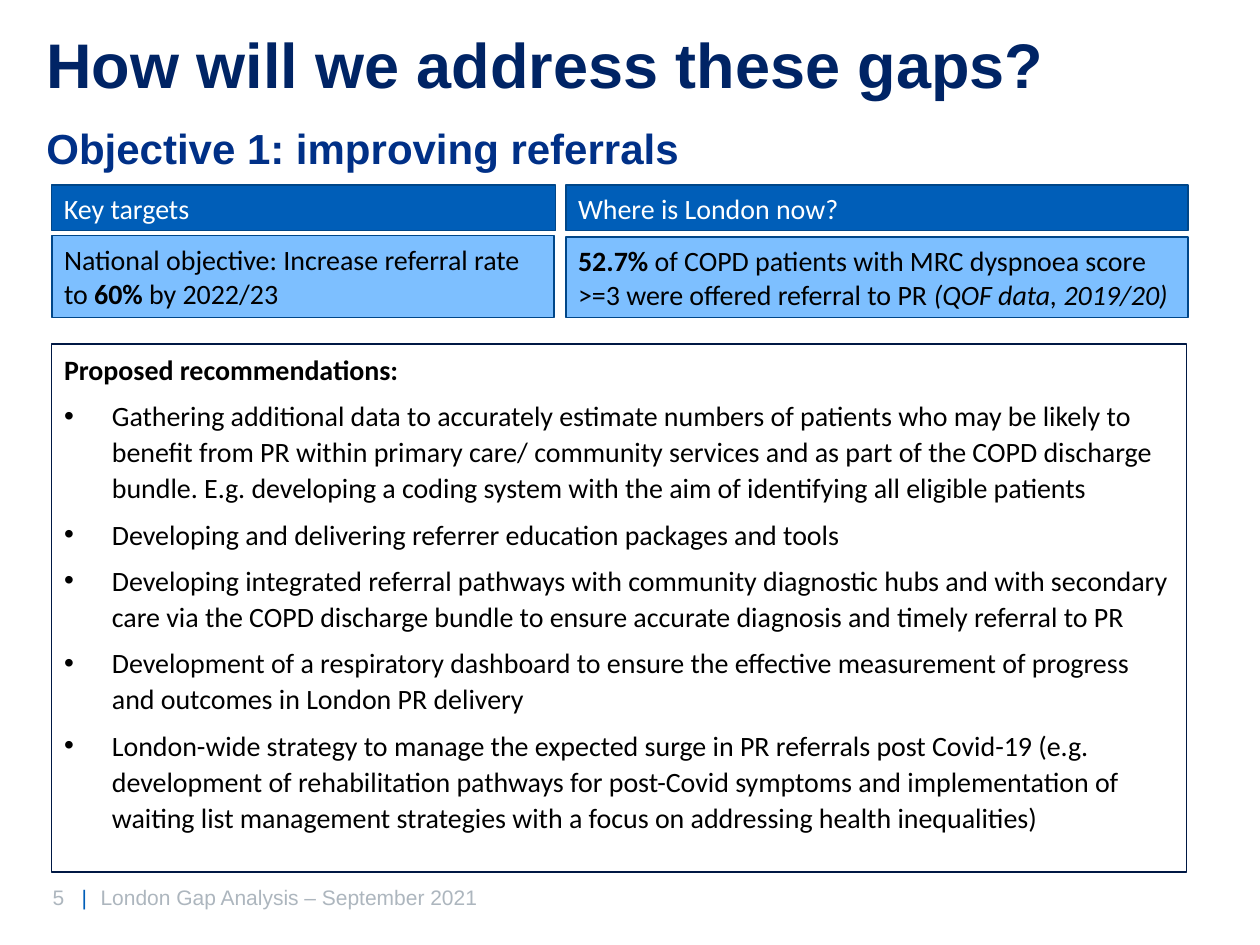
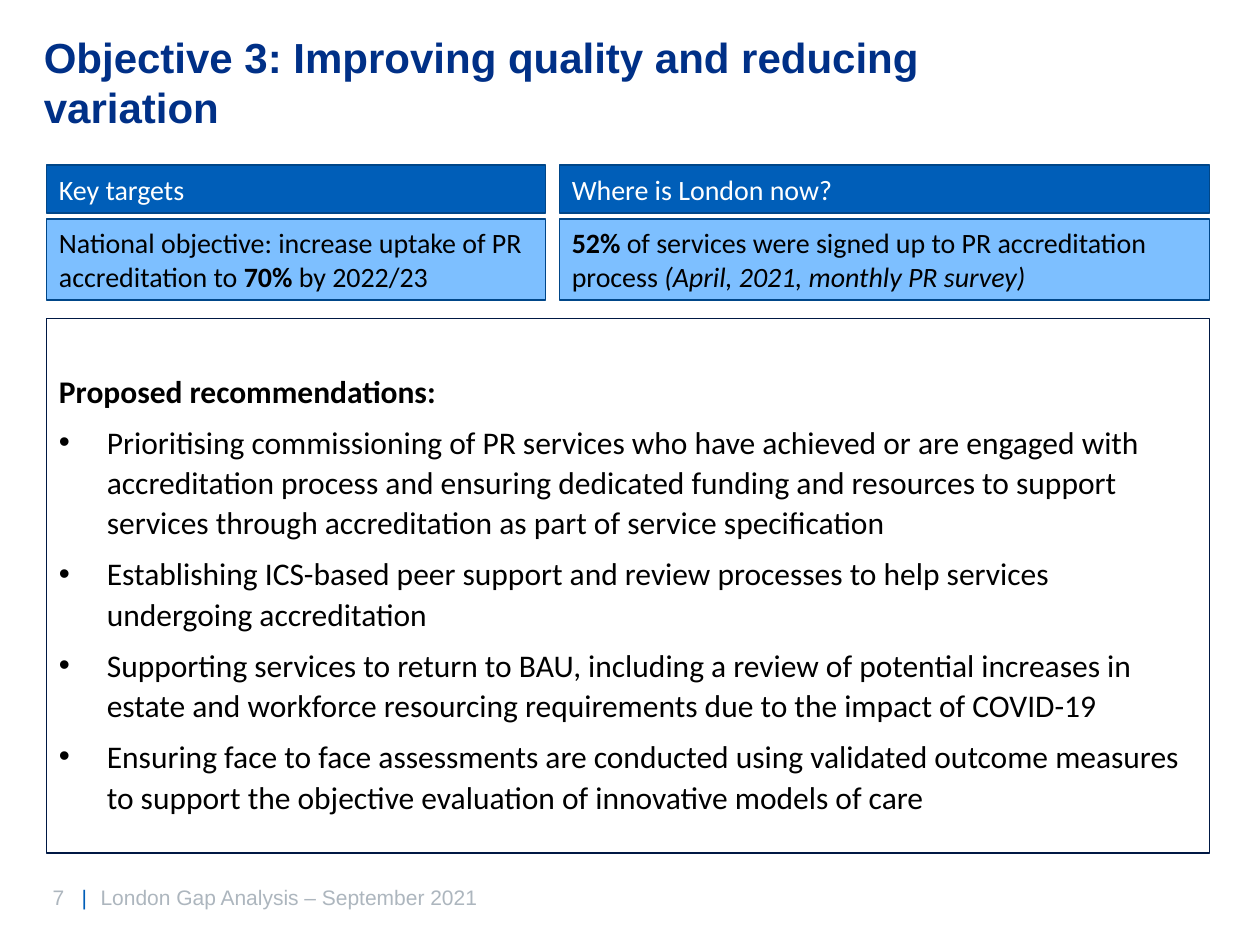
from dataclasses import dataclass

from lxml.etree import SubElement
from pptx import Presentation
from pptx.dml.color import RGBColor
from pptx.enum.shapes import MSO_SHAPE as Preset
from pptx.enum.text import MSO_ANCHOR as Anchor, PP_ALIGN as Align
from pptx.oxml.ns import qn
from pptx.util import Inches, Pt

WHITE = RGBColor(0xFF, 0xFF, 0xFF)
BLACK = RGBColor(0x00, 0x00, 0x00)
TITLE_NAVY = RGBColor(0x00, 0x24, 0x65)
OBJECTIVE_BLUE = RGBColor(0x00, 0x30, 0x87)
HEADER_BLUE = RGBColor(0x00, 0x5E, 0xB8)
DETAIL_BLUE = RGBColor(0x7D, 0xBF, 0xFF)
CARD_EDGE = RGBColor(0x00, 0x46, 0x88)
PANEL_EDGE = RGBColor(0x00, 0x18, 0x44)
FOOTER_GREY = RGBColor(0xAD, 0xB6, 0xBE)

HEADING_FONT, BODY_FONT = "Arial", "Calibri"
FOOTER_TEXT = "London Gap Analysis – September 2021"
BAR_TAB = Inches(0.23)
BULLET_INDENT = Inches(0.38)
CARD_TEXT_SIZE = 16


@dataclass(frozen=True)
class Box:
    left: float
    top: float
    width: float
    height: float

    def emu(self) -> tuple:
        return tuple(Inches(v) for v in (self.left, self.top, self.width, self.height))


@dataclass(frozen=True)
class Words:
    text: str
    bold: bool = False
    italic: bool = False


@dataclass(frozen=True)
class Card:
    header: str
    header_box: Box
    detail: tuple[Words, ...]
    detail_box: Box


@dataclass(frozen=True)
class Recommendations:
    box: Box
    size: int
    anchor: Anchor
    top_inset: float
    points: tuple[str, ...]


@dataclass(frozen=True)
class ObjectiveSlide:
    number: int
    objective: str
    objective_box: Box
    cards: tuple[Card, ...]
    recommendations: Recommendations
    title: str = ""


TITLE_BOX = Box(0.27, 0.22, 8.84, 0.67)
NUMBER_BOX = Box(0.32, 6.97, 0.71, 0.3)
FOOTER_BOX = Box(0.7, 6.92, 6.26, 0.4)

SLIDES = (
    ObjectiveSlide(
        number=5,
        title="How will we address these gaps?",
        objective="Objective 1: improving referrals",
        objective_box=Box(0.27, 0.92, 7.9, 0.5),
        cards=(
            Card(
                "Key targets", Box(0.41, 1.47, 4, 0.36),
                (Words("National objective: Increase referral rate to "),
                 Words("60% ", bold=True), Words("by 2022/23")),
                Box(0.41, 1.87, 3.99, 0.65),
            ),
            Card(
                "Where is London now?", Box(4.49, 1.47, 4.94, 0.36),
                (Words("52.7% ", bold=True),
                 Words("of COPD patients with MRC dyspnoea score >=3 were offered referral to PR "),
                 Words("(QOF data, 2019/20)", italic=True)),
                Box(4.49, 1.88, 4.94, 0.64),
            ),
        ),
        recommendations=Recommendations(
            Box(0.41, 2.73, 9.01, 4.19), 16, Anchor.TOP, 0.05,
            (
                "Gathering additional data to accurately estimate numbers of patients who may be "
                "likely to benefit from PR within primary care/ community services and as part of "
                "the COPD discharge bundle. E.g. developing a coding system with the aim of "
                "identifying all eligible patients",
                "Developing and delivering referrer education packages and tools",
                "Developing integrated referral pathways with community diagnostic hubs and with "
                "secondary care via the COPD discharge bundle to ensure accurate diagnosis and "
                "timely referral to PR",
                "Development of a respiratory dashboard to ensure the effective measurement of "
                "progress and outcomes in London PR delivery",
                "London-wide strategy to manage the expected surge in PR referrals post Covid-19 "
                "(e.g. development of rehabilitation pathways for post-Covid symptoms and "
                "implementation of waiting list management strategies with a focus on addressing "
                "health inequalities)",
            ),
        ),
    ),
    ObjectiveSlide(
        number=7,
        objective="Objective 3: Improving quality and reducing variation",
        objective_box=Box(0.25, 0.2, 8.44, 0.91),
        cards=(
            Card(
                "Key targets", Box(0.37, 1.31, 3.96, 0.38),
                (Words("National objective: increase uptake of PR accreditation to "),
                 Words("70% ", bold=True), Words("by 2022/23")),
                Box(0.37, 1.74, 3.96, 0.64),
            ),
            Card(
                "Where is London now?", Box(4.44, 1.31, 5.16, 0.38),
                (Words("52% ", bold=True),
                 Words("of services were signed up to PR accreditation process "),
                 Words("(April, 2021, monthly PR survey)", italic=True)),
                Box(4.44, 1.74, 5.16, 0.64),
            ),
        ),
        recommendations=Recommendations(
            Box(0.37, 2.53, 9.23, 4.24), 18, Anchor.MIDDLE, 0.15,
            (
                "Prioritising commissioning of PR services who have achieved or are engaged with "
                "accreditation process and ensuring dedicated funding and resources to support "
                "services through accreditation as part of service specification",
                "Establishing ICS-based peer support and review processes to help services "
                "undergoing accreditation",
                "Supporting services to return to BAU, including a review of potential increases "
                "in estate and workforce resourcing requirements due to the impact of COVID-19",
                "Ensuring face to face assessments are conducted using validated outcome measures "
                "to support the objective evaluation of innovative models of care",
            ),
        ),
    ),
)


def add_words(paragraph, words: Words, font: str, size: int, color: RGBColor) -> None:
    run = paragraph.add_run()
    run.text = words.text
    run.font.name, run.font.size = font, Pt(size)
    run.font.bold, run.font.italic = words.bold, words.italic
    run.font.color.rgb = color


def add_label(slide, box: Box, words: Words, size: int, color: RGBColor,
              anchor: Anchor = Anchor.TOP):
    """Draw a heading-font text box and return its paragraph."""
    frame = slide.shapes.add_textbox(*box.emu()).text_frame
    frame.word_wrap = True
    frame.vertical_anchor = anchor
    paragraph = frame.paragraphs[0]
    add_words(paragraph, words, HEADING_FONT, size, color)
    return paragraph


def add_panel(slide, box: Box, fill: RGBColor, edge: RGBColor, edge_width: float,
              anchor: Anchor = Anchor.MIDDLE):
    """Draw an outlined rectangle and return its left-aligned text frame."""
    panel = slide.shapes.add_shape(Preset.RECTANGLE, *box.emu())
    panel.shadow.inherit = False
    panel.fill.solid()
    panel.fill.fore_color.rgb = fill
    panel.line.color.rgb = edge
    panel.line.width = Pt(edge_width)
    frame = panel.text_frame
    frame.word_wrap = True
    frame.vertical_anchor = anchor
    frame.paragraphs[0].alignment = Align.LEFT
    return frame


def add_card(slide, card: Card) -> None:
    rows = (
        (card.header_box, HEADER_BLUE, WHITE, (Words(card.header),)),
        (card.detail_box, DETAIL_BLUE, BLACK, card.detail),
    )
    for box, fill, color, parts in rows:
        frame = add_panel(slide, box, fill, CARD_EDGE, 1)
        for words in parts:
            add_words(frame.paragraphs[0], words, BODY_FONT, CARD_TEXT_SIZE, color)


def make_bullet(paragraph) -> None:
    properties = paragraph._p.get_or_add_pPr()
    properties.set("marL", str(BULLET_INDENT))
    properties.set("indent", str(-BULLET_INDENT))
    SubElement(properties, qn("a:buFont"), typeface="Arial")
    SubElement(properties, qn("a:buChar"), char="•")


def add_recommendations(slide, advice: Recommendations) -> None:
    frame = add_panel(slide, advice.box, WHITE, PANEL_EDGE, 0.75, advice.anchor)
    frame.margin_top = Inches(advice.top_inset)
    heading = frame.paragraphs[0]
    heading.line_spacing = 1.07
    add_words(heading, Words("Proposed recommendations:", bold=True),
              BODY_FONT, advice.size, BLACK)
    for point in advice.points:
        paragraph = frame.add_paragraph()
        make_bullet(paragraph)
        paragraph.alignment = Align.LEFT
        paragraph.line_spacing = 1.07
        paragraph.space_before = Pt(6)
        add_words(paragraph, Words(point), BODY_FONT, advice.size, BLACK)


def add_footer(slide, number: int) -> None:
    page = add_label(slide, NUMBER_BOX, Words(f"{number}\t"), 12, FOOTER_GREY)
    tabs = SubElement(page._p.get_or_add_pPr(), qn("a:tabLst"))
    SubElement(tabs, qn("a:tab"), pos=str(BAR_TAB), algn="l")
    add_words(page, Words("|"), HEADING_FONT, 12, HEADER_BLUE)
    add_label(slide, FOOTER_BOX, Words(FOOTER_TEXT), 12, FOOTER_GREY, Anchor.MIDDLE)


def add_objective_slide(deck, content: ObjectiveSlide) -> None:
    slide = deck.slides.add_slide(deck.slide_layouts[6])
    add_footer(slide, content.number)
    add_recommendations(slide, content.recommendations)
    add_label(slide, content.objective_box, Words(content.objective, bold=True),
              24, OBJECTIVE_BLUE)
    if content.title:
        title = add_label(slide, TITLE_BOX, Words(content.title, bold=True), 36, TITLE_NAVY)
        title.line_spacing = 0.9
    for card in content.cards:
        add_card(slide, card)


def main() -> None:
    deck = Presentation()
    deck.slide_width, deck.slide_height = Inches(10), Inches(7.5)
    for content in SLIDES:
        add_objective_slide(deck, content)
    deck.save("out.pptx")


if __name__ == "__main__":
    main()
